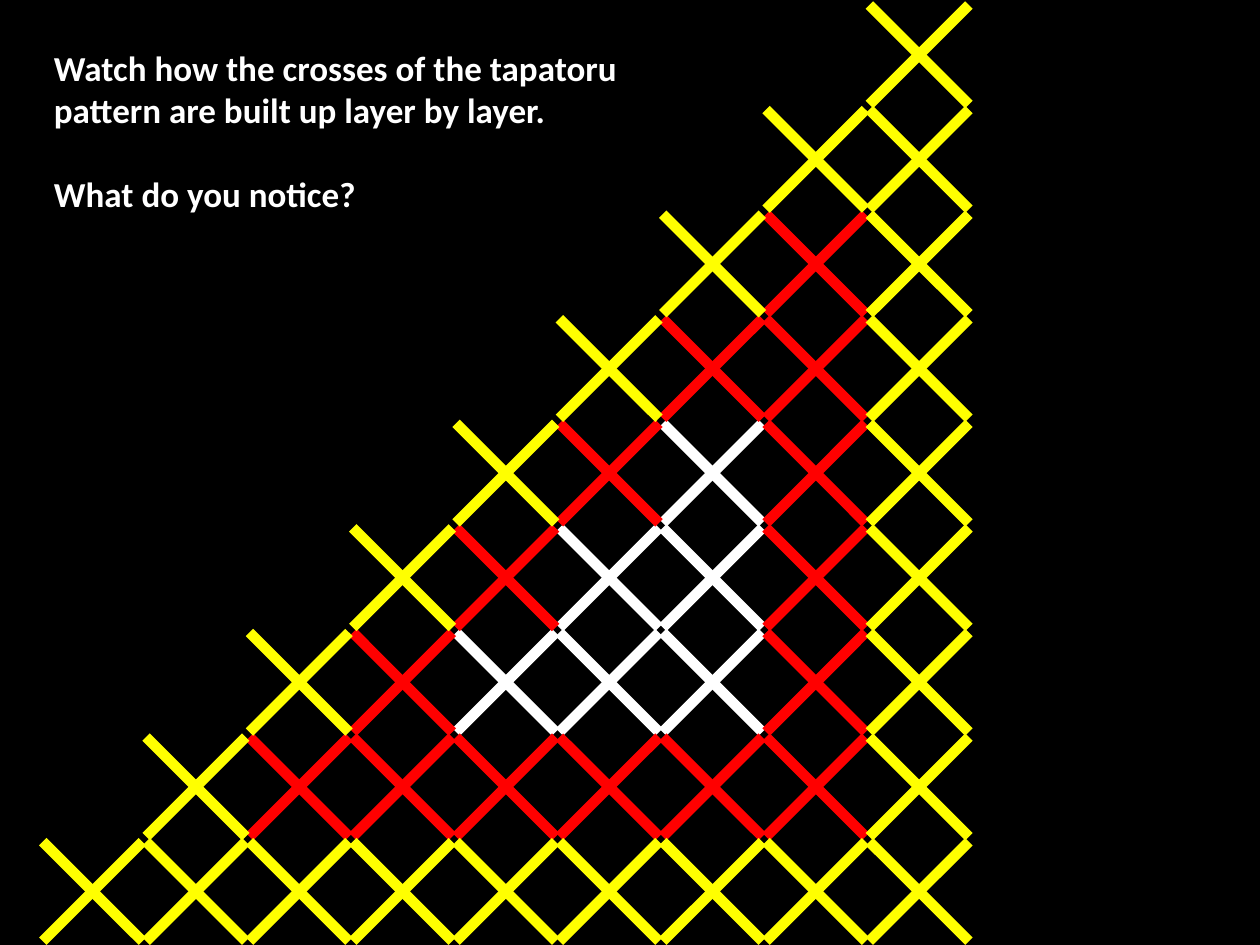
"""Build the tapatoru slide: a stepped triangle of crosses in three nested layers."""
import pptx
import pptx.dml.color
import pptx.enum.shapes
import pptx.enum.text
import pptx.oxml.ns
import pptx.util
from lxml import etree


def colour(value):
    return pptx.dml.color.RGBColor.from_string(value)


def add_stroke(group, start, end, value):
    ends = [pptx.util.Inches(length) for length in (*start, *end)]
    stroke = group.shapes.add_connector(pptx.enum.shapes.MSO_CONNECTOR.STRAIGHT, *ends)
    stroke.line.color.rgb = colour(value)
    stroke.line.width = pptx.util.Pt(6)
    etree.SubElement(stroke.element.spPr, pptx.oxml.ns.qn("a:effectLst"))


deck = pptx.Presentation()
deck.slide_width = pptx.util.Inches(10)
deck.slide_height = pptx.util.Inches(7.5)
page = deck.slides.add_slide(deck.slide_layouts[6])
page.background.fill.solid()
page.background.fill.fore_color.rgb = colour("000000")

box = page.shapes.add_textbox(*[pptx.util.Inches(n) for n in (0.33, 0.32, 4.84, 1.45)])
box.text_frame.word_wrap = True
box.text_frame.auto_size = pptx.enum.text.MSO_AUTO_SIZE.SHAPE_TO_FIT_TEXT
box.text_frame.text = (
    "Watch how the crosses of the tapatoru pattern are built up layer by layer.\n"
    "What do you notice?"
)
for para in box.text_frame.paragraphs:
    for span in para.runs:
        span.font.name = "Calibri"
        span.font.size = pptx.util.Pt(20)
        span.font.bold = True
        span.font.color.rgb = colour("FFFFFF")
box.text_frame.paragraphs[1].space_before = pptx.util.Pt(24)

last = 8
grid_left, grid_top = 0.34, 0.04
column_step, row_step = 0.82, 0.83
cross_size = 0.79

for layer, layer_colour in ((2, "FFFFFF"), (1, "FF0000"), (0, "FFFF00")):
    group = page.shapes.add_group_shape()
    for row in range(last + 1):
        for column in range(last - row, last + 1):
            if min(last - row, last - column, row + column - last) != layer:
                continue
            left = grid_left + column * column_step
            top = grid_top + row * row_step
            right, bottom = left + cross_size, top + cross_size
            add_stroke(group, (left, top), (right, bottom), layer_colour)
            add_stroke(group, (right, top), (left, bottom), layer_colour)

deck.save("out.pptx")
